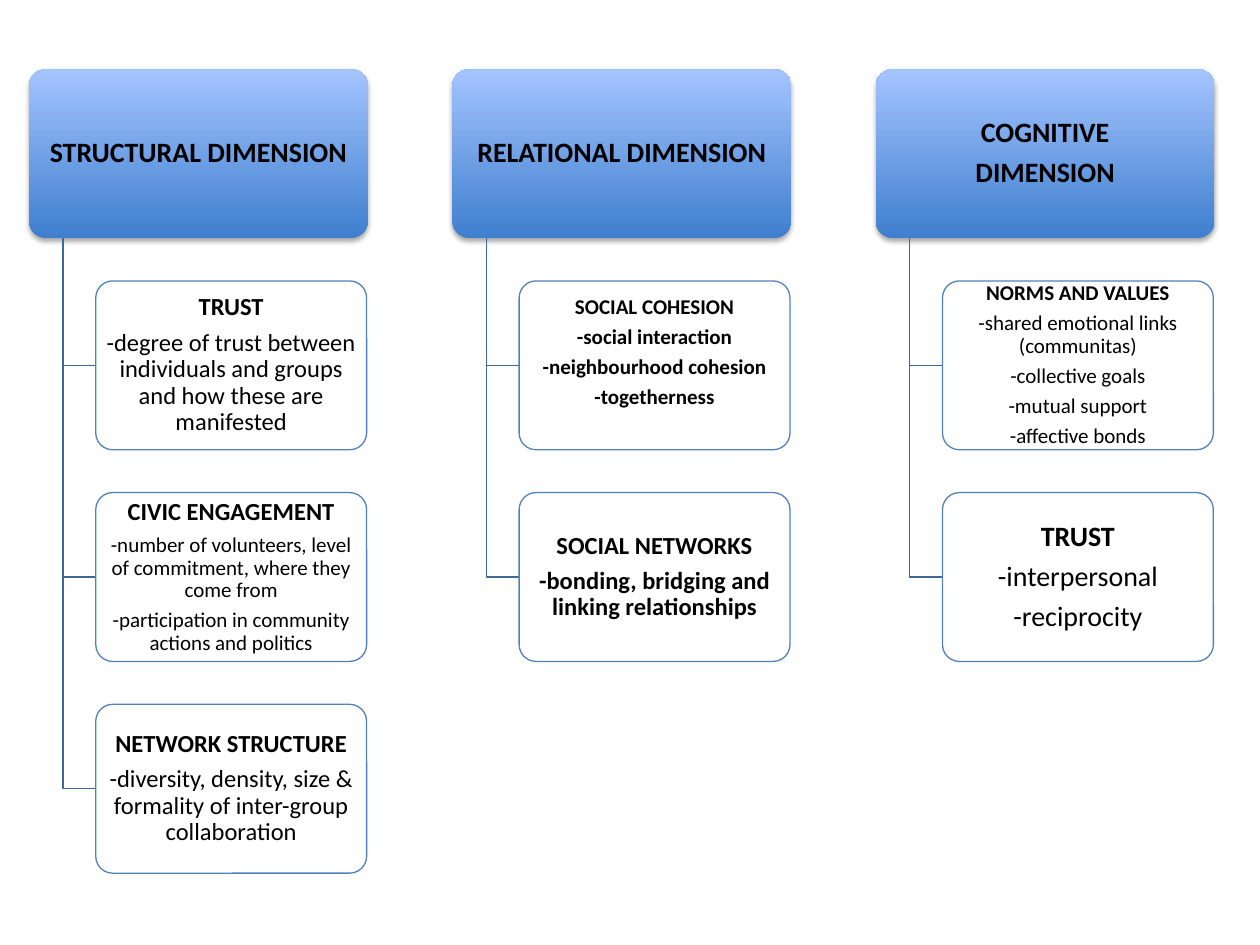
"""Build a slide of three dimensions, each with a tree of parts."""
import pptx
import pptx.dml.color
import pptx.enum.shapes
import pptx.enum.text
import pptx.oxml
import pptx.oxml.ns
import pptx.util

Inches = pptx.util.Inches
ROUND = pptx.enum.shapes.MSO_SHAPE.ROUNDED_RECTANGLE
NS = pptx.oxml.ns.nsdecls("a")


def tint(code):
    return pptx.dml.color.RGBColor.from_string(code)


def write(frame, text, size=14, bold=False, first=False):
    para = frame.paragraphs[0] if first else frame.add_paragraph()
    para.alignment = pptx.enum.text.PP_ALIGN.CENTER
    para.line_spacing = 0.9
    para.space_after = pptx.util.Pt(size * 0.35)
    run = para.add_run()
    run.text = text
    run.font.name = "Calibri"
    run.font.size = pptx.util.Pt(size)
    run.font.bold = bold
    run.font.color.rgb = tint("000000")


groups = [
    ([("STRUCTURAL DIMENSION", 16, True)], [
        [("TRUST", 14, True),
         ("-degree of trust between individuals and groups and how these are manifested", 14, False)],
        [("CIVIC ENGAGEMENT", 14, True),
         ("-number of volunteers, level of commitment, where they come from", 12, False),
         ("-participation in community actions and politics", 12, False)],
        [("NETWORK STRUCTURE", 14, True),
         ("-diversity, density, size & formality of inter-group collaboration", 14, False)],
    ]),
    ([("RELATIONAL DIMENSION", 16, True)], [
        [("SOCIAL COHESION", 12, True), ("-social interaction", 12, True),
         ("-neighbourhood cohesion", 12, True), ("-togetherness", 12, True)],
        [("SOCIAL NETWORKS", 14, True),
         ("-bonding, bridging and linking relationships", 14, True)],
    ]),
    ([("COGNITIVE", 16, True), ("DIMENSION", 16, True)], [
        [("NORMS AND VALUES", 12, True),
         ("-shared emotional links (communitas)", 12, False),
         ("-collective goals", 12, False), ("-mutual support", 12, False),
         ("-affective bonds", 12, False)],
        [("TRUST", 16, True), ("-interpersonal", 16, False), ("-reciprocity", 16, False)],
    ]),
]

deck = pptx.Presentation()
deck.slide_width, deck.slide_height = Inches(10), Inches(7.5)
slide = deck.slides.add_slide(deck.slide_layouts[6])
shapes = slide.shapes

top, high, step = 0.55, 1.34, 1.68
for col, (head, parts) in enumerate(groups):
    left = 0.23 + 3.36 * col
    stem, inner = left + 0.27, left + 0.53
    for row, lines in enumerate([head] + parts):
        y = top + step * row
        if row:
            mid = y + high / 2
            path = shapes.build_freeform(Inches(stem), Inches(top + high))
            path.add_line_segments(
                [(Inches(stem), Inches(mid)), (Inches(inner), Inches(mid))], close=False)
            link = path.convert_to_shape()
            link.shadow.inherit = False
            link.fill.background()
            link.line.color.rgb = tint("3F6797")
            link.line.width = pptx.util.Pt(0.75)
        x, wide = (inner, 2.15) if row else (left, 2.69)
        box = shapes.add_shape(ROUND, Inches(x), Inches(y), Inches(wide), Inches(high))
        box.adjustments[0] = 0.1
        box.shadow.inherit = False
        if row:
            box.fill.solid()
            box.fill.fore_color.rgb = tint("FFFFFF")
            box.line.color.rgb = tint("4F81BD")
            box.line.width = pptx.util.Pt(0.75)
        else:
            box.fill.gradient()
            box.fill.gradient_angle = 90
            for stop, code in zip(box.fill.gradient_stops, ("3F7FCE", "A4C4FF")):
                stop.color.rgb = tint(code)
            box.line.fill.background()
            glow = box._element.spPr.find(pptx.oxml.ns.qn("a:effectLst"))
            glow.append(pptx.oxml.parse_xml(
                f'<a:outerShdw {NS} blurRad="39370" dist="22860" dir="5400000" rotWithShape="0">'
                '<a:srgbClr val="000000"><a:alpha val="35000"/></a:srgbClr></a:outerShdw>'))
        frame = box.text_frame
        frame.word_wrap = True
        frame.vertical_anchor = pptx.enum.text.MSO_ANCHOR.MIDDLE
        frame.margin_left = frame.margin_right = Inches(0.03)
        frame.margin_top = Inches(0.02)
        raised = lines[0][0] == "SOCIAL COHESION"
        frame.margin_bottom = Inches(0.22 if raised else 0.02)
        for num, (text, size, bold) in enumerate(lines):
            write(frame, text, size=size, bold=bold, first=num == 0)

deck.save("out.pptx")
